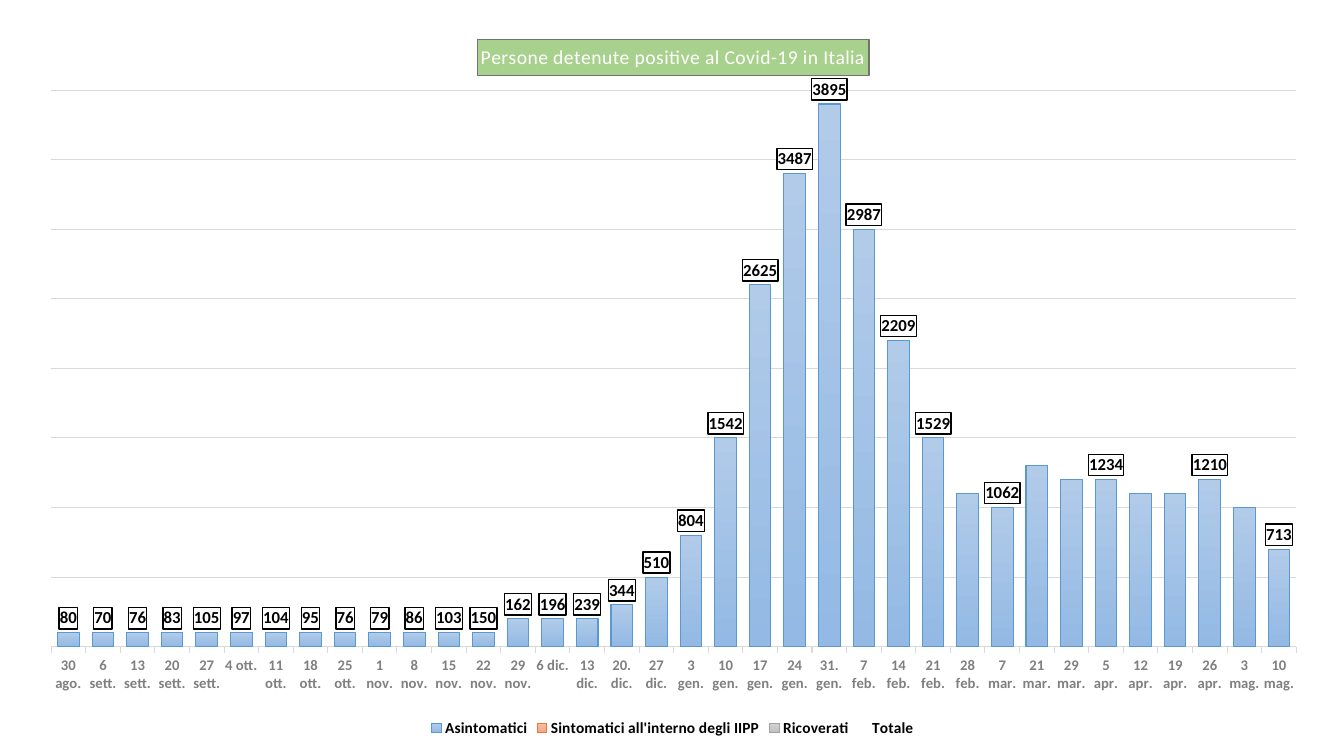
"""Build the slide charting Covid-19 positive detainees in Italy."""
from dataclasses import dataclass

from pptx import Presentation
from pptx import util as u
from pptx.chart.chart import Chart
from pptx.chart.data import CategoryChartData
from pptx.dml.color import RGBColor
from pptx.enum import chart as charts
from pptx.oxml import parse_xml
from pptx.oxml.ns import nsdecls, qn


@dataclass(frozen=True)
class Theme:
    """Colours and type sizes of the slide."""
    font: str = "Calibri"
    ink: str = "000000"
    paper: str = "FFFFFF"
    muted: str = "808080"
    grid: str = "D9D9D9"
    title_fill: str = "A9D18E"
    title_line: str = "767171"
    title_size: float = 14
    label_size: float = 12
    legend_size: float = 11
    axis_size: float = 10.5
    base_size: float = 10


@dataclass(frozen=True)
class Week:
    """The counts reported on one date."""
    date: str
    total: int
    asymptomatic: int
    labelled: bool = True


@dataclass(frozen=True)
class Layer:
    """A visible layer of the stacked columns."""
    name: str
    values: list[int]
    top: str
    bottom: str
    line: str


@dataclass(frozen=True)
class Box:
    """A place in points, with a size where one is needed."""
    left: float
    top: float
    width: float = 0
    height: float = 0


THEME = Theme()
CHART_BOX = Box(17.3, 14.4, 926.6, 515.5)
TITLE_BOX = Box(323.6, 13.6)
PLOT_BOX = Box(19.2, 50, 889.5, 397.6)
WEEKS = [
    Week("30 ago.", 80, 100), Week("6 sett.", 70, 100), Week("13 sett.", 76, 100),
    Week("20 sett.", 83, 100), Week("27 sett.", 105, 100), Week("4 ott.", 97, 100),
    Week("11 ott.", 104, 100), Week("18 ott.", 95, 100), Week("25 ott.", 76, 100),
    Week("1 nov.", 79, 100), Week("8 nov.", 86, 100), Week("15 nov.", 103, 100),
    Week("22 nov.", 150, 100), Week("29 nov.", 162, 200), Week("6 dic.", 196, 200),
    Week("13 dic.", 239, 200), Week("20. dic.", 344, 300), Week("27 dic.", 510, 500),
    Week("3 gen.", 804, 800), Week("10 gen.", 1542, 1500), Week("17 gen.", 2625, 2600),
    Week("24 gen.", 3487, 3400), Week("31. gen.", 3895, 3900), Week("7 feb.", 2987, 3000),
    Week("14 feb.", 2209, 2200), Week("21 feb.", 1529, 1500),
    Week("28 feb.", 1160, 1100, False), Week("7 mar.", 1062, 1000),
    Week("21 mar.", 1341, 1300, False), Week("29 mar.", 1208, 1200, False),
    Week("5 apr.", 1234, 1200), Week("12 apr.", 1080, 1100, False),
    Week("19 apr.", 1069, 1100, False), Week("26 apr.", 1210, 1200),
    Week("3 mag.", 1022, 1000, False), Week("10 mag.", 713, 700),
]
LAYERS = [
    Layer("Asintomatici", [week.asymptomatic for week in WEEKS],
          "B1CBE9", "93B9E4", "5998D0"),
    Layer("Sintomatici all'interno degli IIPP", [0] * len(WEEKS),
          "F7BDA5", "F8A582", "E87A30"),
    Layer("Ricoverati", [0] * len(WEEKS), "D2D2D2", "C0C0C0", "A1A1A1"),
]


def style_font(font, size: float, colour: str, bold: bool = False) -> None:
    """Set the typeface, size, colour and weight of a font."""
    font.name, font.size, font.bold = THEME.font, u.Pt(size), bold
    font.color.rgb = RGBColor.from_string(colour)


def style_line(line, colour: str, width: float = 0.75) -> None:
    """Set the colour and width of a line."""
    line.color.rgb = RGBColor.from_string(colour)
    line.width = u.Pt(width)


def set_layout(element, index: int, box: Box) -> None:
    """Place a chart part within the chart area."""
    for existing in element.findall(qn("c:layout")):
        element.remove(existing)
    places = {"x": box.left / CHART_BOX.width, "y": box.top / CHART_BOX.height}
    target = ""
    if box.width:
        target = '<c:layoutTarget val="inner"/>'
        places["w"] = box.width / CHART_BOX.width
        places["h"] = box.height / CHART_BOX.height
    modes = "".join(f'<c:{key}Mode val="edge"/>' for key in "xy")
    values = "".join(f'<c:{key} val="{value}"/>' for key, value in places.items())
    element.insert(index, parse_xml(
        f'<c:layout {nsdecls("c")}><c:manualLayout>{target}{modes}{values}'
        '</c:manualLayout></c:layout>'))


def add_title(chart: Chart) -> None:
    """Add the boxed chart title."""
    title = chart.chart_title
    title.text_frame.text = "Persone detenute positive al Covid-19 in Italia"
    run = title.text_frame.paragraphs[0].runs[0]
    style_font(run.font, THEME.title_size, THEME.paper)
    run.font._element.set("spc", "20")
    title.format.fill.solid()
    title.format.fill.fore_color.rgb = RGBColor.from_string(THEME.title_fill)
    style_line(title.format.line, THEME.title_line, 1)
    set_layout(title._element, 1, TITLE_BOX)


def style_axes(chart: Chart) -> None:
    """Format the date axis, the hidden value axis and its gridlines."""
    dates, values = chart.category_axis, chart.value_axis
    style_font(dates.tick_labels.font, THEME.axis_size, THEME.muted, True)
    style_line(dates.format.line, THEME.grid)
    dates.major_tick_mark = charts.XL_TICK_MARK.OUTSIDE
    values.minimum_scale, values.maximum_scale, values.major_unit = 0, 4000, 500
    values.has_major_gridlines = True
    style_line(values.major_gridlines.format.line, THEME.grid)
    values.visible = False


def style_layer(series, layer: Layer) -> None:
    """Give a column layer its vertical gradient and outline."""
    fill = series.format.fill
    fill.gradient()
    fill.gradient_angle = 270
    for stop, colour in zip(fill.gradient_stops, (layer.top, layer.bottom)):
        stop.color.rgb = RGBColor.from_string(colour)
    style_line(series.format.line, layer.line)


def label_totals(series) -> None:
    """Show boxed totals above the columns through an unfilled series."""
    series.format.fill.background()
    series.format.line.fill.background()
    labels = series.data_labels
    labels.show_value = True
    labels.position = charts.XL_LABEL_POSITION.INSIDE_BASE
    style_font(labels.font, THEME.label_size, THEME.ink, True)
    element = labels._element
    element.find(qn("c:txPr")).addprevious(parse_xml(
        f'<c:spPr {nsdecls("c", "a")}><a:solidFill><a:srgbClr val="{THEME.paper}"/>'
        f'</a:solidFill><a:ln w="{u.Pt(1)}"><a:solidFill><a:srgbClr val="{THEME.ink}"/>'
        '</a:solidFill></a:ln></c:spPr>'))
    unlabelled = [index for index, week in enumerate(WEEKS) if not week.labelled]
    for place, index in enumerate(unlabelled):
        element.insert(place, parse_xml(
            f'<c:dLbl {nsdecls("c")}><c:idx val="{index}"/><c:delete val="1"/></c:dLbl>'))


def add_detainee_chart(slide) -> None:
    """Add the stacked column chart with its totals and legend."""
    data = CategoryChartData()
    data.categories = [week.date for week in WEEKS]
    for layer in LAYERS:
        data.add_series(layer.name, layer.values)
    data.add_series("Totale", [week.total for week in WEEKS])
    chart = slide.shapes.add_chart(
        charts.XL_CHART_TYPE.COLUMN_STACKED, u.Pt(CHART_BOX.left), u.Pt(CHART_BOX.top),
        u.Pt(CHART_BOX.width), u.Pt(CHART_BOX.height), data).chart
    style_font(chart.font, THEME.base_size, THEME.ink)
    add_title(chart)
    style_axes(chart)
    plot = chart.plots[0]
    plot.gap_width, plot.overlap, plot.vary_by_categories = 60, 100, False
    for series, layer in zip(plot.series, LAYERS):
        style_layer(series, layer)
    label_totals(plot.series[len(LAYERS)])
    chart.has_legend = True
    chart.legend.position = charts.XL_LEGEND_POSITION.BOTTOM
    chart.legend.include_in_layout = False
    style_font(chart.legend.font, THEME.legend_size, THEME.ink, True)
    set_layout(chart._chartSpace.chart.plotArea, 0, PLOT_BOX)


def main() -> None:
    """Create and save the presentation."""
    presentation = Presentation()
    presentation.slide_width, presentation.slide_height = u.Pt(960), u.Pt(540)
    slide = presentation.slides.add_slide(presentation.slide_layouts[6])
    add_detainee_chart(slide)
    presentation.save("out.pptx")


if __name__ == "__main__":
    main()
